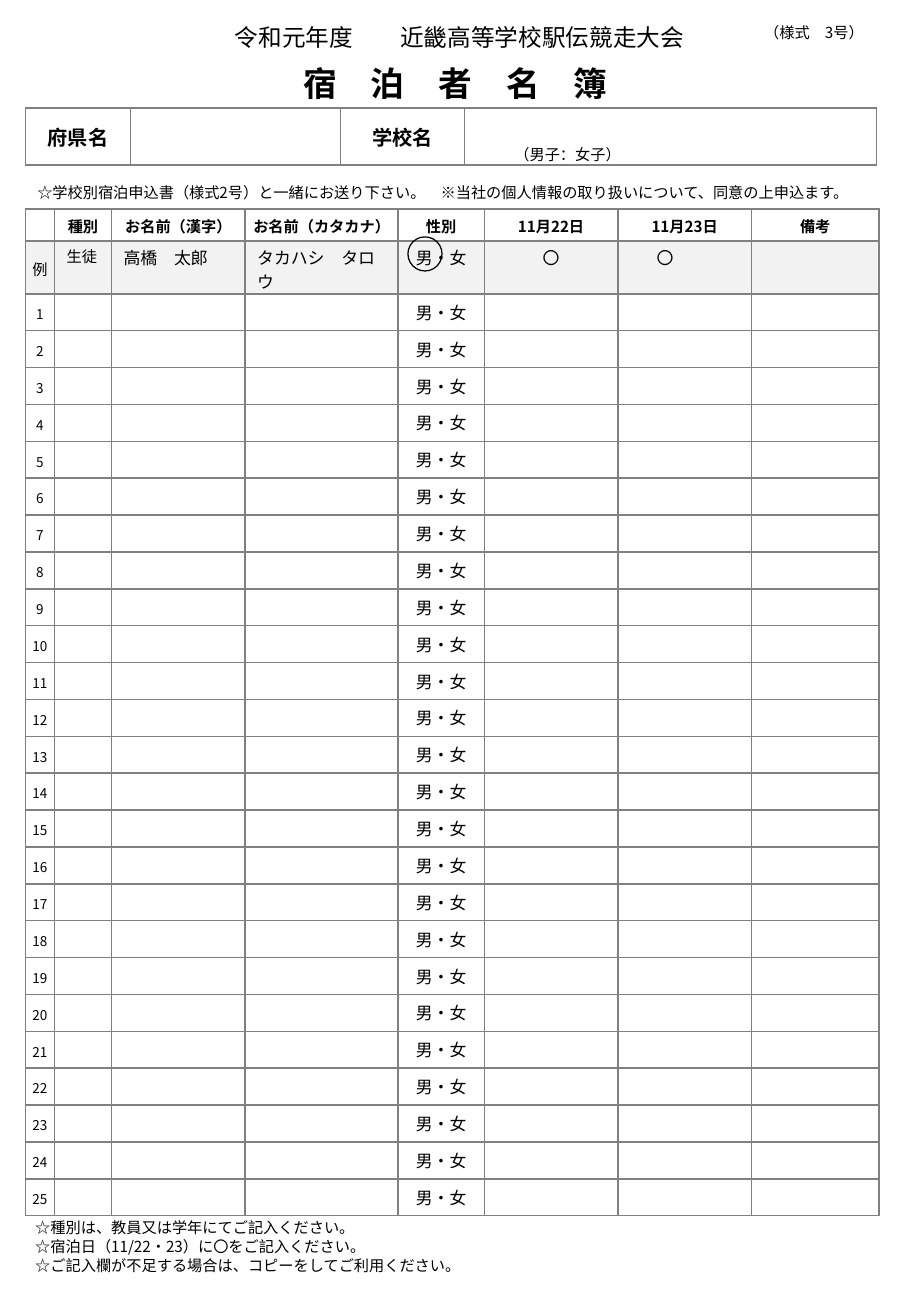
from dataclasses import dataclass

from lxml import etree
from pptx import Presentation
from pptx.dml.color import RGBColor
from pptx.enum.shapes import MSO_SHAPE
from pptx.enum.text import MSO_ANCHOR, MSO_AUTO_SIZE, PP_ALIGN
from pptx.oxml.ns import qn
from pptx.util import Pt

LEFT, CENTER = PP_ALIGN.LEFT, PP_ALIGN.CENTER
TOP, MIDDLE, BOTTOM = MSO_ANCHOR.TOP, MSO_ANCHOR.MIDDLE, MSO_ANCHOR.BOTTOM
OVAL = MSO_SHAPE.OVAL
NO_FIT = MSO_AUTO_SIZE.NONE


@dataclass(frozen=True)
class Theme:
    font: str = "Noto Sans CJK JP"
    ink: RGBColor = RGBColor(0, 0, 0)
    shade: RGBColor = RGBColor(0xF2, 0xF2, 0xF2)
    grid: str = "808080"
    title: int = 20
    event: int = 14
    label: int = 12
    entry: int = 10
    note: int = 9
    count: int = 8


THEME = Theme()
PAD = (7.2, 3.6, 7.2, 3.6)
SLIM = (2.9, 3.6, 2.9, 2)

EVENT = "令和元年度　　近畿高等学校駅伝競走大会"
NOTICE = ("☆学校別宿泊申込書（様式2号）と一緒にお送り下さい。"
          "　※当社の個人情報の取り扱いについて、同意の上申込ます。")
HEADS = ["", "種別", "お名前（漢字）", "お名前（カタカナ）", "性別",
         "11月22日", "11月23日", "備考"]
SAMPLE = ["例", "生徒", "高橋　太郎", "タカハシ　タロウ", "男・女", "〇", "〇", ""]
NOTES = ["☆種別は、教員又は学年にてご記入ください。",
         "☆宿泊日（11/22・23）に〇をご記入ください。",
         "☆ご記入欄が不足する場合は、コピーをしてご利用ください。"]
GUESTS = 25


def write(para, text, size, bold=False, align=LEFT):
    para.alignment = align
    if not text:
        para._p.get_or_add_endParaRPr().set("sz", str(size * 100))
        return
    run = para.add_run()
    run.text = text
    look = {"size": Pt(size), "bold": bold, "name": THEME.font}
    for key, value in look.items():
        setattr(run.font, key, value)
    run.font.color.rgb = THEME.ink
    face = etree.SubElement(run._r.get_or_add_rPr(), qn("a:ea"))
    face.set("typeface", THEME.font)


def inset(item, pad):
    """Set the left, top, right and bottom margins of a cell or text frame."""
    for side, size in zip(("left", "top", "right", "bottom"), pad):
        setattr(item, "margin_" + side, Pt(size))


def place(shape, box):
    for key, size in zip(("left", "top", "width", "height"), box):
        setattr(shape, key, Pt(size))


def frame(shape, anchor):
    body = shape.text_frame
    body.auto_size = NO_FIT
    body.word_wrap = True
    body.vertical_anchor = anchor
    inset(body, PAD)
    return body


def label(slide, box, text, size, align=CENTER):
    shape = slide.shapes.add_textbox(*map(Pt, box))
    write(frame(shape, MIDDLE).paragraphs[0], text, size, align=align)


def fill_cell(cell, text, size, bold=False, align=LEFT, anchor=TOP,
              pad=PAD, shaded=False):
    cell.vertical_anchor = anchor
    inset(cell, pad)
    write(cell.text_frame.paragraphs[0], text, size, bold, align)
    if shaded:
        cell.fill.solid()
        cell.fill.fore_color.rgb = THEME.shade
    else:
        cell.fill.background()
    props = cell._tc.get_or_add_tcPr()
    for spot, side in enumerate(("lnL", "lnR", "lnT", "lnB")):
        line = etree.Element(qn("a:" + side), w=str(Pt(1)))
        fill = etree.SubElement(line, qn("a:solidFill"))
        etree.SubElement(fill, qn("a:srgbClr"), val=THEME.grid)
        props.insert(spot, line)


def add_grid(slide, left, top, widths, heights):
    box = (left, top, sum(widths), sum(heights))
    table = slide.shapes.add_table(
        len(heights), len(widths), *map(Pt, box)).table
    table.first_row = table.horz_banding = False
    for col, width in zip(table.columns, widths):
        col.width = Pt(width)
    for row, height in zip(table.rows, heights):
        row.height = Pt(height)
    return table


def add_head(slide, left, top, width):
    label(slide, (left + 28, top, width - 47, 24.5), EVENT, THEME.event)
    label(slide, (left + 428, top, 79, 18), "（様式　3号）", THEME.note)
    title = slide.shapes.title
    place(title, (left + 113, top + 23, 284, 32))
    write(frame(title, MIDDLE).paragraphs[0], "宿　泊　者　名　簿",
          THEME.title, True, CENTER)


def add_school(slide, left, top):
    table = add_grid(slide, left, top, [62.5, 124.5, 73.5, 244], [33.8])
    for col, text in enumerate(["府県名", "", "学校名"]):
        fill_cell(table.cell(0, col), text, THEME.label, True, CENTER, MIDDLE)
    fill_cell(table.cell(0, 3), "（男子：女子）", THEME.note,
              anchor=BOTTOM, pad=(29.5, 0, 2.9, 0))


def add_roster(slide, left, top):
    widths = [17.3, 33.8, 79.2, 90.7, 51.1, 79.2, 79.2, 75.6]
    head, first, step = 19, 31.4, 21.88
    table = add_grid(slide, left, top, widths, [head, first] + [step] * GUESTS)
    for col, text in enumerate(HEADS):
        fill_cell(table.cell(0, col), text, THEME.note, True, CENTER, pad=SLIM)
    for col, text in enumerate(SAMPLE):
        indent = 23 if col == 6 else 7.2
        fill_cell(table.cell(1, col), text,
                  THEME.note if col < 2 else THEME.entry,
                  align=CENTER if col in (0, 4, 5) else LEFT,
                  anchor=TOP if col else MIDDLE,
                  pad=(indent, 2.4, 7.2, 0) if col else SLIM, shaded=True)
    for guest in range(1, GUESTS + 1):
        row = guest + 1
        fill_cell(table.cell(row, 0), str(guest), THEME.count,
                  align=CENTER, anchor=MIDDLE, pad=SLIM)
        for col in range(1, len(widths)):
            fill_cell(table.cell(row, col), "男・女" if col == 4 else "",
                      THEME.entry, align=CENTER)
    mark = slide.shapes.add_shape(
        OVAL, *map(Pt, (left + 226.8, top + 16.6, 20.2, 20.2)))
    mark.shadow.inherit = False
    mark.fill.background()
    mark.line.color.rgb = THEME.ink
    mark.line.width = Pt(0.75)


def add_notes(slide, box):
    shape = slide.placeholders[1]
    place(shape, box)
    body = frame(shape, TOP)
    for spot, text in enumerate(NOTES):
        para = body.add_paragraph() if spot else body.paragraphs[0]
        props = para._p.get_or_add_pPr()
        props.set("marL", "0")
        props.set("indent", "0")
        etree.SubElement(props, qn("a:buNone"))
        para.space_before = Pt(0)
        para.line_spacing = Pt(11)
        write(para, text, THEME.note)


def main():
    deck = Presentation()
    deck.slide_width, deck.slide_height = Pt(540), Pt(780)
    slide = deck.slides.add_slide(deck.slide_layouts[1])
    left, width = 15, 506
    add_head(slide, left, 10, width)
    add_school(slide, left, 64.1)
    label(slide, (left, 105, width, 18), NOTICE, THEME.note, LEFT)
    add_roster(slide, left, 123.8)
    add_notes(slide, (left - 1.3, 718.6, width, 40.4))
    deck.save("out.pptx")


if __name__ == "__main__":
    main()
